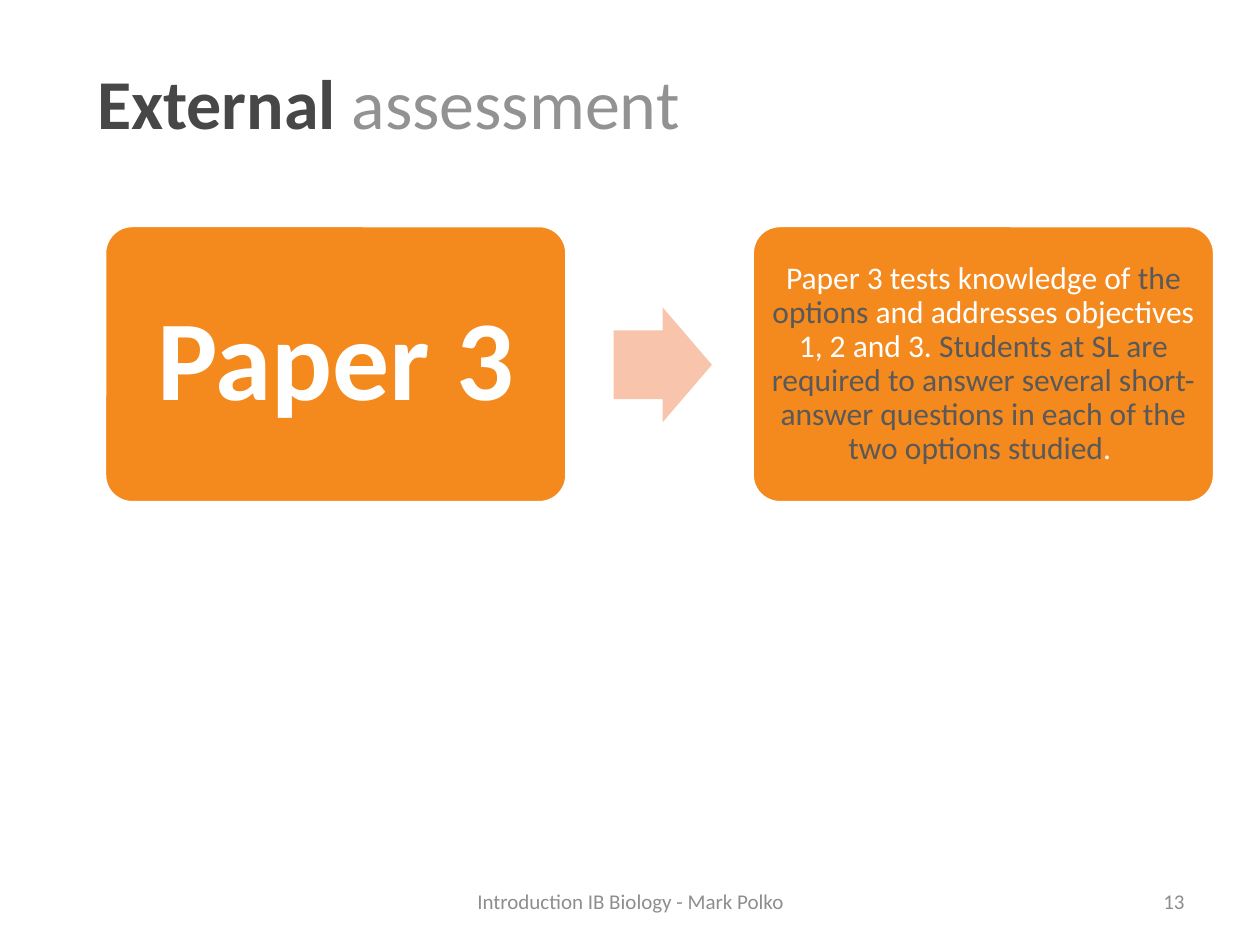
from pptx import Presentation
from pptx.dml.color import RGBColor
from pptx.enum.shapes import MSO_SHAPE
from pptx.enum.text import MSO_ANCHOR, MSO_AUTO_SIZE, PP_ALIGN
from pptx.util import Inches, Pt

ORANGE = RGBColor(0xF4, 0x89, 0x1E)
PEACH = RGBColor(0xF8, 0xC4, 0xAC)
WHITE = RGBColor(0xFF, 0xFF, 0xFF)
TITLE_DARK = RGBColor(0x47, 0x47, 0x47)
TITLE_LIGHT = RGBColor(0x92, 0x92, 0x92)
BODY_GRAY = RGBColor(0x59, 0x59, 0x59)
FOOTER_GRAY = RGBColor(0x8E, 0x8E, 0x8E)


class SlideBuilder:
    font_name = "Calibri"

    def __init__(self, slide):
        self.slide = slide

    def add_text(self, shape, runs, size, alignment, inset=None, line_spacing=1.0):
        """Fill a shape with one paragraph of (text, colour, bold) runs."""
        frame = shape.text_frame
        frame.word_wrap = True
        frame.auto_size = MSO_AUTO_SIZE.NONE
        frame.vertical_anchor = MSO_ANCHOR.MIDDLE
        if inset is not None:
            frame.margin_left = frame.margin_right = Inches(inset)
            frame.margin_top = frame.margin_bottom = Inches(inset)
        paragraph = frame.paragraphs[0]
        paragraph.alignment = alignment
        paragraph.line_spacing = line_spacing
        for text, color, bold in runs:
            run = paragraph.add_run()
            run.text = text
            run.font.name = self.font_name
            run.font.size = Pt(size)
            run.font.bold = bold
            run.font.color.rgb = color

    def title(self, left, top, width, height, runs):
        title = self.slide.shapes.title
        title.left, title.top = Inches(left), Inches(top)
        title.width, title.height = Inches(width), Inches(height)
        self.add_text(title, runs, 40, PP_ALIGN.LEFT)

    def shape(self, kind, left, top, width, height, fill, adjustments):
        shape = self.slide.shapes.add_shape(
            kind, Inches(left), Inches(top), Inches(width), Inches(height))
        shape.shadow.inherit = False
        shape.fill.solid()
        shape.fill.fore_color.rgb = fill
        shape.line.fill.background()
        for index, value in enumerate(adjustments):
            shape.adjustments[index] = value
        return shape

    def card(self, left, runs, size, inset):
        card = self.shape(MSO_SHAPE.ROUNDED_RECTANGLE, left, 1.79, 3.67, 2.2,
                          ORANGE, [0.1])
        card.line.color.rgb = WHITE
        card.line.width = Pt(2)
        self.add_text(card, runs, size, PP_ALIGN.CENTER, inset, 0.9)

    def arrow(self, left, top, width, height):
        self.shape(MSO_SHAPE.RIGHT_ARROW, left, top, width, height, PEACH, [0.6, 0.5])

    def footer(self, left, width, text, alignment):
        box = self.slide.shapes.add_textbox(
            Inches(left), Inches(6.95), Inches(width), Inches(0.4))
        self.add_text(box, [(text, FOOTER_GRAY, False)], 12, alignment)


def main():
    presentation = Presentation()
    presentation.slide_width = Inches(10)
    presentation.slide_height = Inches(7.5)
    title_only = presentation.slide_layouts[5]
    builder = SlideBuilder(presentation.slides.add_slide(title_only))

    builder.title(0.67, 0.42, 8.67, 0.77, [
        ("External ", TITLE_DARK, True),
        ("assessment", TITLE_LIGHT, False),
    ])
    builder.card(0.83, [("Paper 3", WHITE, True)], 65, 0.27)
    builder.arrow(4.87, 2.44, 0.78, 0.91)
    builder.card(5.97, [
        ("Paper 3 tests knowledge of ", WHITE, False),
        ("the options ", BODY_GRAY, False),
        ("and addresses objectives 1, 2 and 3. ", WHITE, False),
        ("Students at SL are required to answer several short-answer questions "
         "in each of the two options studied", BODY_GRAY, False),
        (". ", WHITE, False),
    ], 18, 0.07)
    builder.footer(3.42, 3.17, "Introduction IB Biology - Mark Polko", PP_ALIGN.CENTER)
    builder.footer(7.17, 2.33, "13", PP_ALIGN.RIGHT)
    presentation.save("out.pptx")


if __name__ == "__main__":
    main()
